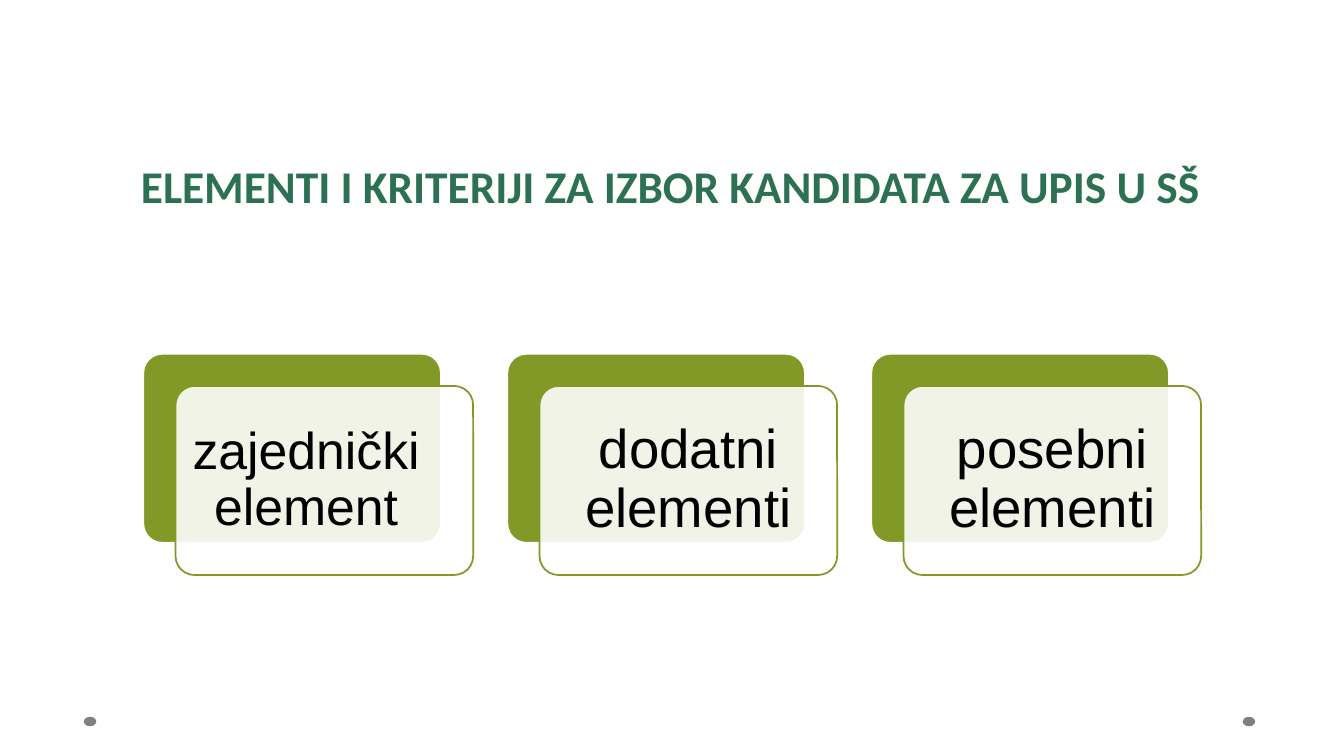
from lxml.etree import SubElement
from pptx import Presentation
from pptx.dml.color import RGBColor
from pptx.enum.shapes import MSO_SHAPE
from pptx.enum.text import MSO_ANCHOR, PP_ALIGN
from pptx.oxml.ns import qn
from pptx.util import Pt

COLORS = {
    "olive": "829927",
    "white": "FFFFFF",
    "green": "2C7153",
    "gray": "808080",
    "black": "000000",
}

deck = Presentation()
deck.slide_width, deck.slide_height = Pt(960), Pt(540)
page = deck.slides.add_slide(deck.slide_layouts[6])


def add_panel(kind, left, top, width, height, fill, line=None):
    panel = page.shapes.add_shape(kind, Pt(left), Pt(top), Pt(width), Pt(height))
    panel.shadow.inherit = False
    panel.fill.solid()
    panel.fill.fore_color.rgb = RGBColor.from_string(COLORS[fill])
    if line:
        panel.line.color.rgb = RGBColor.from_string(COLORS[line])
        panel.line.width = Pt(1.25)
    else:
        panel.line.fill.background()
    return panel


def add_label(text, left, top, width, height, inset, font, size, color, bold=False):
    """Add a wrapped text box, centred both ways, and return its text frame."""
    box = page.shapes.add_textbox(Pt(left), Pt(top), Pt(width), Pt(height))
    frame = box.text_frame
    frame.word_wrap = True
    frame.vertical_anchor = MSO_ANCHOR.MIDDLE
    frame.margin_left = frame.margin_right = Pt(inset)
    frame.margin_top = frame.margin_bottom = Pt(inset)
    para = frame.paragraphs[0]
    para.text = text
    para.alignment = PP_ALIGN.CENTER
    para.line_spacing = 0.9
    para.font.name = font
    para.font.size = Pt(size)
    para.font.bold = bold
    para.font.color.rgb = RGBColor.from_string(COLORS[color])
    return frame


# Footer dots
for dot_left in (59.9, 887.7):
    add_panel(MSO_SHAPE.OVAL, dot_left, 512, 8.9, 6.8, "gray")

# Title, set slightly below the middle of its box
title = add_label("ELEMENTI I KRITERIJI ZA IZBOR KANDIDATA ZA UPIS U SŠ",
                  45, 77, 868, 103, 7.2, "Calibri", 32.4, "green", bold=True)
title.margin_top = Pt(20)

# Three cards: olive back plate, translucent front plate, label
CARD_LEFT, CARD_TOP, CARD_STEP = 102.4, 252.7, 260
CARD_WIDTH, CARD_HEIGHT = 212.6, 135
FRONT_OFFSET = 23
elements = [  # text, label offset from card, label width, font size
    ("zajednički element", 0, 232.6, 37),
    ("dodatni elementi", 27, 204.6, 39),
    ("posebni elementi", 27, 204.6, 39),
]
for index, (text, label_offset, label_width, size) in enumerate(elements):
    left = CARD_LEFT + index * CARD_STEP
    back = add_panel(MSO_SHAPE.ROUNDED_RECTANGLE, left, CARD_TOP,
                     CARD_WIDTH, CARD_HEIGHT, "olive", "white")
    front = add_panel(MSO_SHAPE.ROUNDED_RECTANGLE, left + FRONT_OFFSET,
                      CARD_TOP + FRONT_OFFSET, CARD_WIDTH, CARD_HEIGHT,
                      "white", "olive")
    back.adjustments[0] = front.adjustments[0] = 0.1
    front_color = front.fill._xPr.find(qn("a:solidFill"))[0]
    SubElement(front_color, qn("a:alpha"), val="89000")
    add_label(text, left + label_offset, CARD_TOP + 26.7, label_width, 127.4,
              13.7, "Arial", size, "black")

deck.save("out.pptx")
